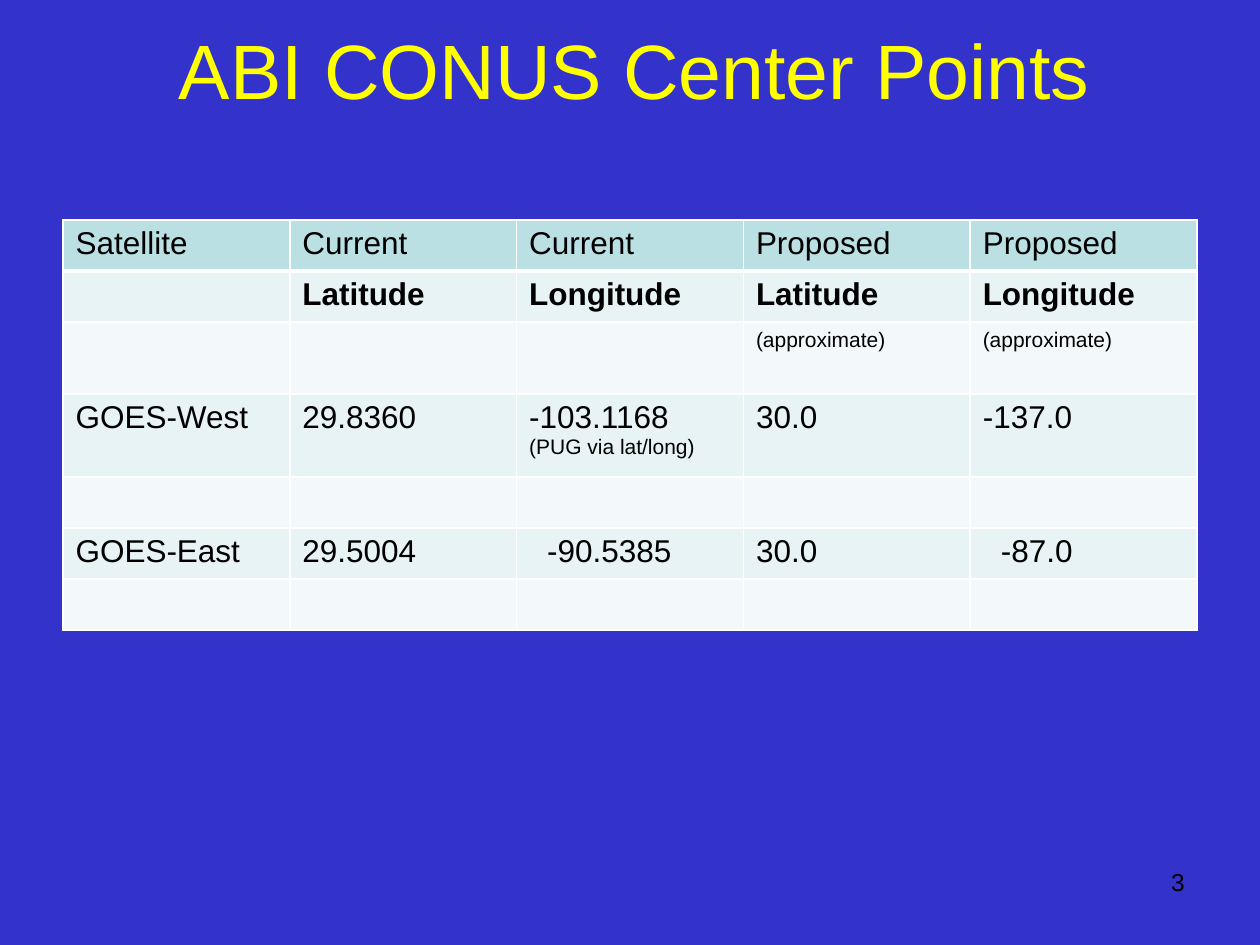
from dataclasses import dataclass

from lxml.etree import SubElement
from pptx import Presentation
from pptx.dml.color import RGBColor
from pptx.enum.text import MSO_ANCHOR, PP_ALIGN
from pptx.oxml.ns import qn
from pptx.util import Pt

EMU_PER_PX = 914400 / 126


@dataclass(frozen=True)
class Theme:
    font: str = "Arial"
    background: str = "3333CC"
    heading: str = "FFFF00"
    ink: str = "000000"
    rule: str = "FFFFFF"
    header_fill: str = "BBE0E3"
    band_fills: tuple = ("E7F3F4", "F3F9FA")
    title_size: int = 44
    body_size: int = 18
    note_size: int = 12
    number_size: int = 14


THEME = Theme()

# Lines within a cell are separated by "\n"; text in parentheses is a note.
CENTER_POINTS = [
    ["Satellite", "Current", "Current", "Proposed", "Proposed"],
    ["", "Latitude", "Longitude", "Latitude", "Longitude"],
    ["", "", "", "(approximate)", "(approximate)"],
    ["GOES-West", "29.8360", "-103.1168\n(PUG via lat/long)", "30.0", "-137.0"],
    [""] * 5,
    ["GOES-East", "29.5004", "-90.5385", "30.0", "-87.0"],
    [""] * 5,
]
ROW_HEIGHTS = [51, 51, 72, 83, 51, 51, 51]
HEADER_ROW, SUBHEADER_ROW = 0, 1
SHORT_LONGITUDES = ("-90.5385", "-87.0")
SHORT_LONGITUDE_INDENT = 18


def px(length):
    return round(length * EMU_PER_PX)


def style_paragraph(paragraph, size, color, bold=False):
    for run in paragraph.runs:
        run.font.name = THEME.font
        run.font.size = Pt(size)
        run.font.bold = bold
        run.font.color.rgb = RGBColor.from_string(color)


def add_title(slide, left, top, width, height):
    title = slide.shapes.title
    title.left, title.top = px(left), px(top)
    title.width, title.height = px(width), px(height)
    frame = title.text_frame
    frame.text = "ABI CONUS Center Points"
    frame.vertical_anchor = MSO_ANCHOR.MIDDLE
    frame.paragraphs[0].alignment = PP_ALIGN.CENTER
    style_paragraph(frame.paragraphs[0], THEME.title_size, THEME.heading)


def add_page_number(slide, left, top, width, height):
    number = slide.shapes.add_textbox(px(left), px(top), px(width), px(height))
    frame = number.text_frame
    frame.word_wrap = True
    frame.text = "3"
    frame.paragraphs[0].alignment = PP_ALIGN.RIGHT
    style_paragraph(frame.paragraphs[0], THEME.number_size, THEME.ink)


def set_borders(cell, bottom_width):
    """Rule all four sides; the lines must precede the fill in the XML."""
    properties = cell._tc.get_or_add_tcPr()
    for side, width in (("L", 1), ("R", 1), ("T", 1), ("B", bottom_width)):
        line = SubElement(properties, qn(f"a:ln{side}"), w=str(Pt(width)))
        fill = SubElement(line, qn("a:solidFill"))
        SubElement(fill, qn("a:srgbClr"), val=THEME.rule)


def fill_cell(cell, text, row):
    is_header = row == HEADER_ROW
    set_borders(cell, bottom_width=3 if is_header else 1)
    cell.fill.solid()
    color = THEME.header_fill if is_header else THEME.band_fills[(row - 1) % 2]
    cell.fill.fore_color.rgb = RGBColor.from_string(color)
    cell.text_frame.text = text
    for paragraph in cell.text_frame.paragraphs:
        is_note = paragraph.text.startswith("(")
        size = THEME.note_size if is_note else THEME.body_size
        style_paragraph(paragraph, size, THEME.ink, bold=row == SUBHEADER_ROW)
        if paragraph.text in SHORT_LONGITUDES:
            indent = str(px(SHORT_LONGITUDE_INDENT))
            paragraph._p.get_or_add_pPr().set("marL", indent)


def add_center_points(slide, left, top, width, height):
    column_count = len(CENTER_POINTS[0])
    table = slide.shapes.add_table(
        len(CENTER_POINTS), column_count,
        px(left), px(top), px(width), px(height),
    ).table
    table.first_row = table.horz_banding = False
    for column in table.columns:
        column.width = px(width / column_count)
    for row, values in enumerate(CENTER_POINTS):
        table.rows[row].height = px(ROW_HEIGHTS[row])
        for column, text in enumerate(values):
            fill_cell(table.cell(row, column), text, row)


def main():
    deck = Presentation()
    deck.slide_width, deck.slide_height = px(1260), px(945)
    slide = deck.slides.add_slide(deck.slide_layouts[5])
    slide.background.fill.solid()
    slide.background.fill.fore_color.rgb = RGBColor.from_string(THEME.background)
    add_title(slide, 10, -10, 1250, 158)
    add_page_number(slide, 903, 861, 294, 65)
    add_center_points(slide, 63, 220, 1134, sum(ROW_HEIGHTS))
    deck.save("out.pptx")


if __name__ == "__main__":
    main()
